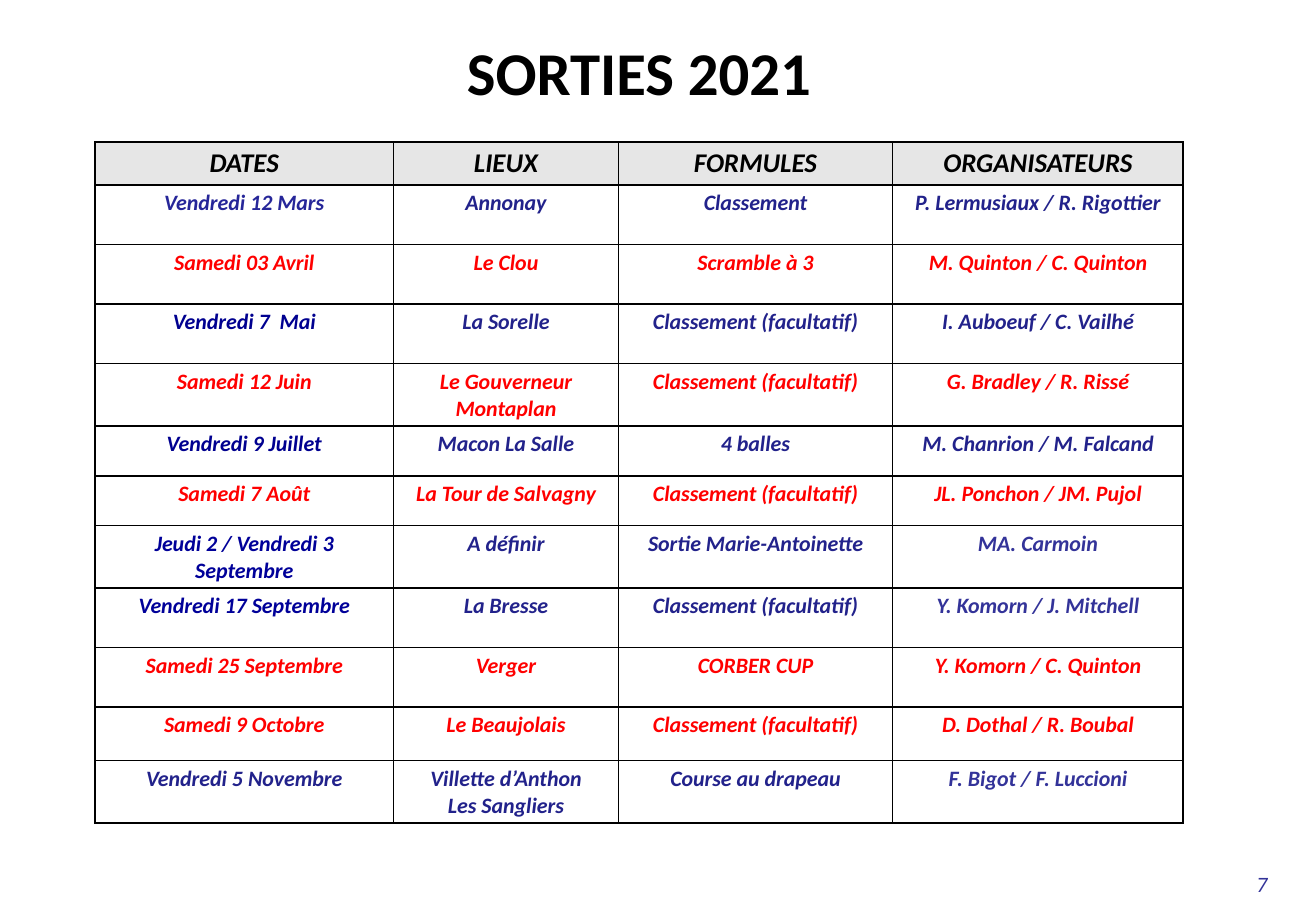
from pptx import Presentation
from pptx.dml.color import RGBColor
from pptx.enum.text import MSO_ANCHOR, PP_ALIGN
from pptx.util import Pt
from lxml.etree import SubElement
from pptx.oxml.ns import qn

BLACK, RED, NAVY, INDIGO = "000000", "FF0000", "22228B", "333399"


def style(p, size, color, align, bold=True, italic=True):
    p.alignment = align
    p.font.name, p.font.size = "Calibri", Pt(size)
    p.font.bold, p.font.italic = bold, italic
    p.font.color.rgb = RGBColor.from_string(color)


def add_borders(cell):
    tcPr = cell._tc.get_or_add_tcPr()
    for i, side in enumerate(("a:lnL", "a:lnR", "a:lnT", "a:lnB")):
        ln = SubElement(tcPr, qn(side), w=str(Pt(1)))
        SubElement(SubElement(ln, qn("a:solidFill")), qn("a:srgbClr"), val=BLACK)
        tcPr.insert(i, ln)  # borders come before the fill


prs = Presentation()
prs.slide_width, prs.slide_height = Pt(780), Pt(540)
s = prs.slides.add_slide(prs.slide_layouts[6])

# Page number and title
for text, box, size, color, align, bold, italic in (
    ("7", (621.5, 512.5, 136.8, 26), 13, INDIGO, PP_ALIGN.RIGHT, False, True),
    ("SORTIES 2021", (27.4, 17.3, 702.7, 65.5), 36, BLACK, PP_ALIGN.CENTER, True, False),
):
    tf = s.shapes.add_textbox(*map(Pt, box)).text_frame
    tf.word_wrap = True
    p = tf.paragraphs[0]
    p.text = text
    style(p, size, color, align, bold, italic)

# Outings: row height, colours of date, middle columns and organisers, then texts
header = ("DATES", "LIEUX", "FORMULES", "ORGANISATEURS")
outings = [
    (35.3, "262699", NAVY, NAVY, "Vendredi 12 Mars", "Annonay", "Classement", "P. Lermusiaux / R. Rigottier"),
    (35.3, RED, RED, RED, "Samedi 03 Avril", "Le Clou", "Scramble à 3", "M. Quinton / C. Quinton"),
    (35.3, "000090", NAVY, NAVY, "Vendredi 7  Mai", "La Sorelle", "Classement (facultatif)", "I. Auboeuf / C. Vailhé"),
    (35.3, RED, RED, RED, "Samedi 12 Juin", "Le Gouverneur\nMontaplan", "Classement (facultatif)", "G. Bradley / R. Rissé"),
    (29.5, "000090", NAVY, NAVY, "Vendredi 9 Juillet", "Macon La Salle", "4 balles", "M. Chanrion / M. Falcand"),
    (29.5, RED, RED, RED, "Samedi 7 Août", "La Tour de Salvagny", "Classement (facultatif)", "JL. Ponchon / JM. Pujol"),
    (35.3, "000099", NAVY, INDIGO, "Jeudi 2 / Vendredi 3 Septembre", "A définir", "Sortie Marie-Antoinette", "MA. Carmoin"),
    (35.3, "000099", NAVY, INDIGO, "Vendredi 17 Septembre", "La Bresse", "Classement (facultatif)", "Y. Komorn / J. Mitchell"),
    (35.3, RED, RED, RED, "Samedi 25 Septembre", "Verger", "CORBER CUP", "Y. Komorn / C. Quinton"),
    (31.7, RED, RED, RED, "Samedi 9 Octobre", "Le Beaujolais", "Classement (facultatif)", "D. Dothal / R. Boubal"),
    (35.3, NAVY, NAVY, INDIGO, "Vendredi 5 Novembre", "Villette d’Anthon\nLes Sangliers", "Course au drapeau", "F. Bigot / F. Luccioni"),
]
rows = [(25.5, BLACK, BLACK, BLACK, *header)] + outings
widths = (177.1, 133.2, 162.7, 172.1)

# Table
table = s.shapes.add_table(len(rows), len(widths), Pt(56.2), Pt(84.2),
                           Pt(sum(widths)), Pt(sum(row[0] for row in rows))).table
table.horz_banding = False
for col, width in zip(table.columns, widths):
    col.width = Pt(width)
for r, (height, date_color, color, organiser_color, *texts) in enumerate(rows):
    table.rows[r].height = Pt(height)
    colors = (date_color, color, color, organiser_color)
    for c, text in enumerate(texts):
        cell = table.cell(r, c)
        cell.margin_left = cell.margin_right = Pt(5.8)
        cell.margin_top = cell.margin_bottom = Pt(2.9)
        cell.vertical_anchor = MSO_ANCHOR.TOP
        cell.fill.solid()
        cell.fill.fore_color.rgb = RGBColor.from_string("FFFFFF" if r else "E6E6E6")
        add_borders(cell)
        cell.text = text
        for p in cell.text_frame.paragraphs:
            style(p, 13 if r else 16, colors[c], PP_ALIGN.CENTER)

prs.save("out.pptx")
